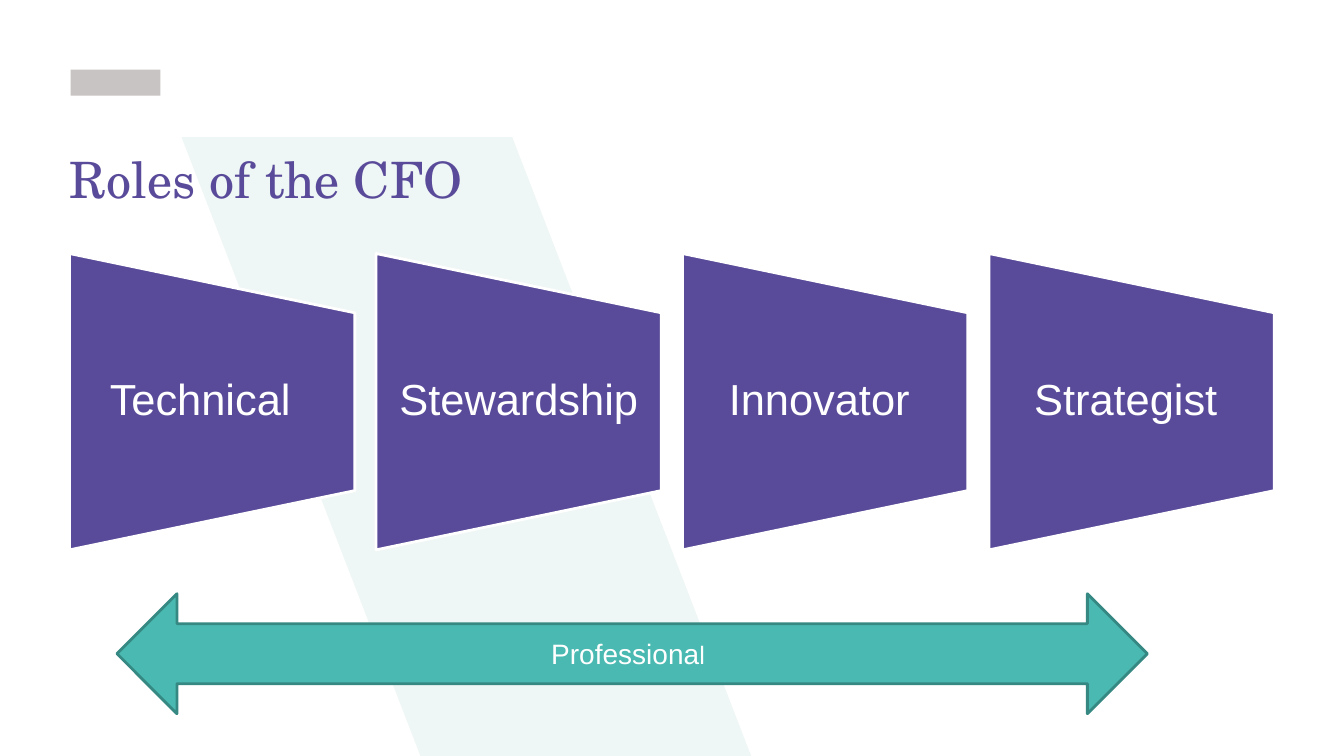
import pptx
import pptx.util
import pptx.dml.color
import pptx.enum.shapes
import pptx.enum.text

Inches = pptx.util.Inches
Pt = pptx.util.Pt
Kind = pptx.enum.shapes.MSO_SHAPE
Align = pptx.enum.text.PP_ALIGN
Anchor = pptx.enum.text.MSO_ANCHOR
Fit = pptx.enum.text.MSO_AUTO_SIZE


def color(code):
    return pptx.dml.color.RGBColor.from_string(code)


class Deck:
    purple, teal, edge = "5A4B9A", "49B9B1", "368983"
    white, pale, grey = "FFFFFF", "EEF7F5", "C7C4C3"
    serif, sans = "TeX Gyre Schola", "Arial"

    def __init__(self, wide, high):
        self.prs = pptx.Presentation()
        self.prs.slide_width = Inches(wide)
        self.prs.slide_height = Inches(high)
        self.slide = self.prs.slides.add_slide(self.prs.slide_layouts[5])
        self.shapes = self.slide.shapes

    def paint(self, shape, fill, line=None):
        shape.shadow.inherit = False
        shape.fill.solid()
        shape.fill.fore_color.rgb = color(fill)
        if line:
            shape.line.color.rgb = color(line)
            shape.line.width = Pt(2)
        else:
            shape.line.fill.background()

    def style(self, run, size, face, tint):
        run.font.size = Pt(size)
        run.font.name = face
        run.font.color.rgb = color(tint)

    def frame(self, shape, inset, anchor, extra=0):
        frame = shape.text_frame
        frame.word_wrap = True
        frame.auto_size = Fit.NONE
        frame.vertical_anchor = anchor
        frame.margin_left = Inches(inset)
        frame.margin_right = Inches(inset + extra)
        frame.margin_top = frame.margin_bottom = 0
        return frame

    def title(self, text, box):
        shape = self.shapes.title
        shape.left, shape.top, shape.width, shape.height = map(Inches, box)
        frame = self.frame(shape, 0, Anchor.TOP)
        frame.text = text
        para = frame.paragraphs[0]
        para.alignment = Align.LEFT
        self.style(para.runs[0], 35.8, self.serif, self.purple)
        # Lift the title above the band
        self.shapes._spTree.append(shape._element)

    def outline(self, points, fill):
        spots = [(Inches(x), Inches(y)) for x, y in points]
        build = self.shapes.build_freeform(*spots[0])
        build.add_line_segments(spots[1:], close=True)
        self.paint(build.convert_to_shape(), fill)

    def shape(self, kind, box, fill, line=None):
        shape = self.shapes.add_shape(kind, *map(Inches, box))
        self.paint(shape, fill, line)
        return shape

    def label(self, text, box, extra):
        shape = self.shapes.add_textbox(*map(Inches, box))
        frame = self.frame(shape, 0.22, Anchor.MIDDLE, extra)
        frame.text = text
        para = frame.paragraphs[0]
        para.alignment = Align.CENTER
        para.line_spacing = 0.9
        self.style(para.runs[0], 31, self.sans, self.white)

    def role(self, text, left, extra):
        wide, high = 2.83, 2.94
        mid = left + wide / 2
        panel = self.shape(Kind.FLOWCHART_MANUAL_OPERATION,
                           (mid - high / 2, 2.57, high, wide),
                           self.purple, self.white)
        panel.rotation = 270
        self.label(text, (left, 3.1, wide, 1.76), extra)

    def arrow(self, parts, box):
        shape = self.shape(Kind.LEFT_RIGHT_ARROW, box, self.teal, self.edge)
        para = self.frame(shape, 0.1, Anchor.MIDDLE, 0.08).paragraphs[0]
        para.alignment = Align.CENTER
        for text, size in parts:
            run = para.add_run()
            run.text = text
            self.style(run, size, self.sans, self.white)


def main():
    deck = Deck(13.33, 7.5)

    # Backdrop: grey mark and slanted band
    deck.shape(Kind.RECTANGLE, (0.7, 0.69, 0.89, 0.26), deck.grey)
    deck.outline([(1.8, 1.36), (5.08, 1.36), (7.45, 7.5), (4.17, 7.5)],
                 deck.pale)

    # Heading
    deck.title("Roles of the CFO", (0.69, 1.47, 11.61, 0.6))

    # Four roles, each with its extra right inset
    roles = [("Technical", 0.24), ("Stewardship", 0),
             ("Innovator", 0.12), ("Strategist", 0.12)]
    for i, (name, extra) in enumerate(roles):
        deck.role(name, 0.69 + 3.04 * i, extra)

    # Shared base
    deck.arrow([("Professiona", 20), ("l", 18)], (1.16, 5.89, 10.22, 1.19))

    deck.prs.save("out.pptx")


if __name__ == "__main__":
    main()
